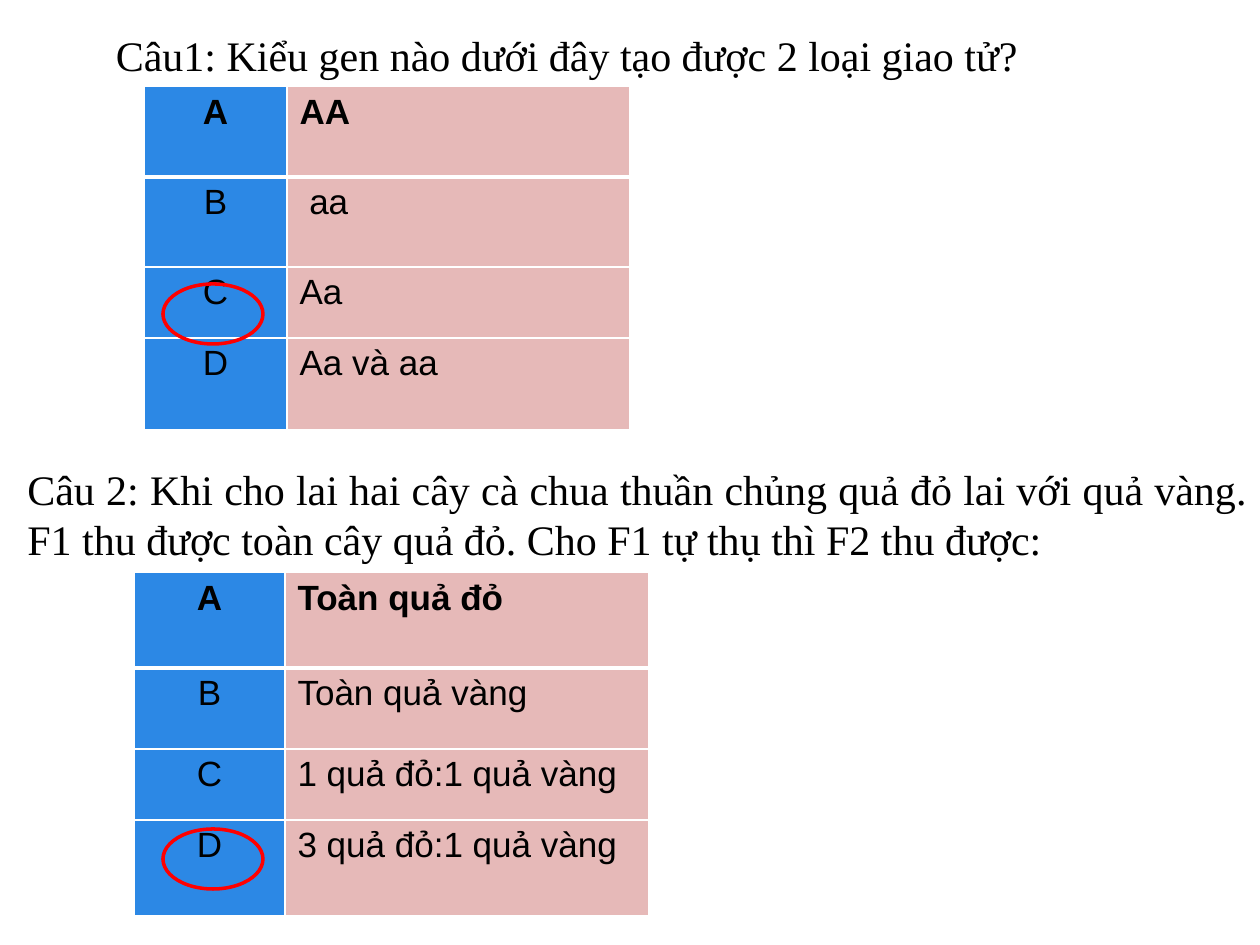
from dataclasses import dataclass

from lxml import etree
from pptx import Presentation
from pptx.dml.color import RGBColor
from pptx.enum.shapes import MSO_SHAPE
from pptx.enum.text import MSO_ANCHOR, PP_ALIGN
from pptx.oxml.ns import qn
from pptx.util import Emu, Pt

ELLIPSE = MSO_SHAPE.OVAL
TOP, MIDDLE = MSO_ANCHOR.TOP, MSO_ANCHOR.MIDDLE
LEFT, CENTER, JUSTIFY = PP_ALIGN.LEFT, PP_ALIGN.CENTER, PP_ALIGN.JUSTIFY

EMU_PER_PX = 914400 / 126
PAGE_WIDTH, PAGE_HEIGHT = 1260, 945


@dataclass(frozen=True)
class Theme:
    text: str = "000000"
    letter_fill: str = "2C88E5"
    answer_fill: str = "E6B9B8"
    border: str = "FFFFFF"
    mark: str = "FF0000"
    question_font: str = "Times New Roman"
    answer_font: str = "Arial"
    question_size: int = 24
    answer_size: int = 20
    thin: int = 1
    thick: int = 3
    mark_width: int = 2


def px(length):
    return Emu(round(length * EMU_PER_PX))


def color(value):
    return RGBColor.from_string(value)


class QuizPage:
    def __init__(self, page, theme):
        self.page = page
        self.theme = theme

    def add_text(self, frame, text, font, size, align, bold=False):
        para = frame.paragraphs[0]
        para.alignment = align
        span = para.add_run()
        span.text = text
        span.font.name = font
        span.font.size = Pt(size)
        span.font.bold = bold
        span.font.color.rgb = color(self.theme.text)

    def question(self, text, left, top, width, height, align, anchor=TOP):
        box = self.page.shapes.add_textbox(px(left), px(top), px(width), px(height))
        frame = box.text_frame
        frame.word_wrap = True
        frame.vertical_anchor = anchor
        self.add_text(frame, text, self.theme.question_font, self.theme.question_size, align)

    def border(self, cell, side, width):
        line = etree.SubElement(cell._tc.get_or_add_tcPr(), qn(f"a:ln{side}"), w=str(Pt(width)))
        fill = etree.SubElement(line, qn("a:solidFill"))
        etree.SubElement(fill, qn("a:srgbClr"), val=self.theme.border)

    def answers(self, texts, left, top, widths, heights):
        theme = self.theme
        frame = self.page.shapes.add_table(
            len(texts), len(widths), px(left), px(top), px(sum(widths)), px(sum(heights)))
        table = frame.table
        table.first_row = table.horz_banding = False
        for column, width in zip(table.columns, widths):
            column.width = px(width)
        for row, height in zip(table.rows, heights):
            row.height = px(height)

        styles = ((CENTER, theme.letter_fill), (LEFT, theme.answer_fill))
        for row, pair in enumerate(zip("ABCD", texts)):
            # The line under the first row is the thick one
            top_line = theme.thick if row == 1 else theme.thin
            bottom_line = theme.thick if row == 0 else theme.thin
            sides = {"L": theme.thin, "R": theme.thin, "T": top_line, "B": bottom_line}
            for column, (text, (align, fill)) in enumerate(zip(pair, styles)):
                cell = table.cell(row, column)
                for side, width in sides.items():
                    self.border(cell, side, width)
                cell.fill.solid()
                cell.fill.fore_color.rgb = color(fill)
                self.add_text(cell.text_frame, text, theme.answer_font,
                              theme.answer_size, align, bold=row == 0)

    def mark(self, left, top, width=100, height=60):
        ring = self.page.shapes.add_shape(ELLIPSE, px(left), px(top), px(width), px(height))
        ring.shadow.inherit = False
        ring.fill.background()
        ring.line.color.rgb = color(self.theme.mark)
        ring.line.width = Pt(self.theme.mark_width)


def main():
    deck = Presentation()
    deck.slide_width, deck.slide_height = px(PAGE_WIDTH), px(PAGE_HEIGHT)
    quiz = QuizPage(deck.slides.add_slide(deck.slide_layouts[6]), Theme())

    # Question 1, right answer C
    quiz.question("Câu1: Kiểu gen nào dưới đây tạo được 2 loại giao tử?",
                  0, 0, 1134, 110, CENTER, MIDDLE)
    quiz.answers(["AA", " aa", "Aa", "Aa và aa"],
                 144, 86, [143, 343], [91, 90, 71, 92])
    quiz.mark(163, 284)

    # Question 2, right answer D
    quiz.question("Câu 2: Khi cho lai hai cây cà chua thuần chủng quả đỏ lai với quả vàng. "
                  "F1 thu được toàn cây quả đỏ. Cho F1 tự thụ thì F2 thu được:",
                  15, 457, 1245, 115, JUSTIFY)
    quiz.answers(["Toàn quả đỏ", "Toàn quả vàng", "1 quả đỏ:1 quả vàng", "3 quả đỏ:1 quả vàng"],
                 134, 572, [151, 364], [96, 81, 71, 96])
    quiz.mark(163, 829)

    deck.save("out.pptx")


if __name__ == "__main__":
    main()
